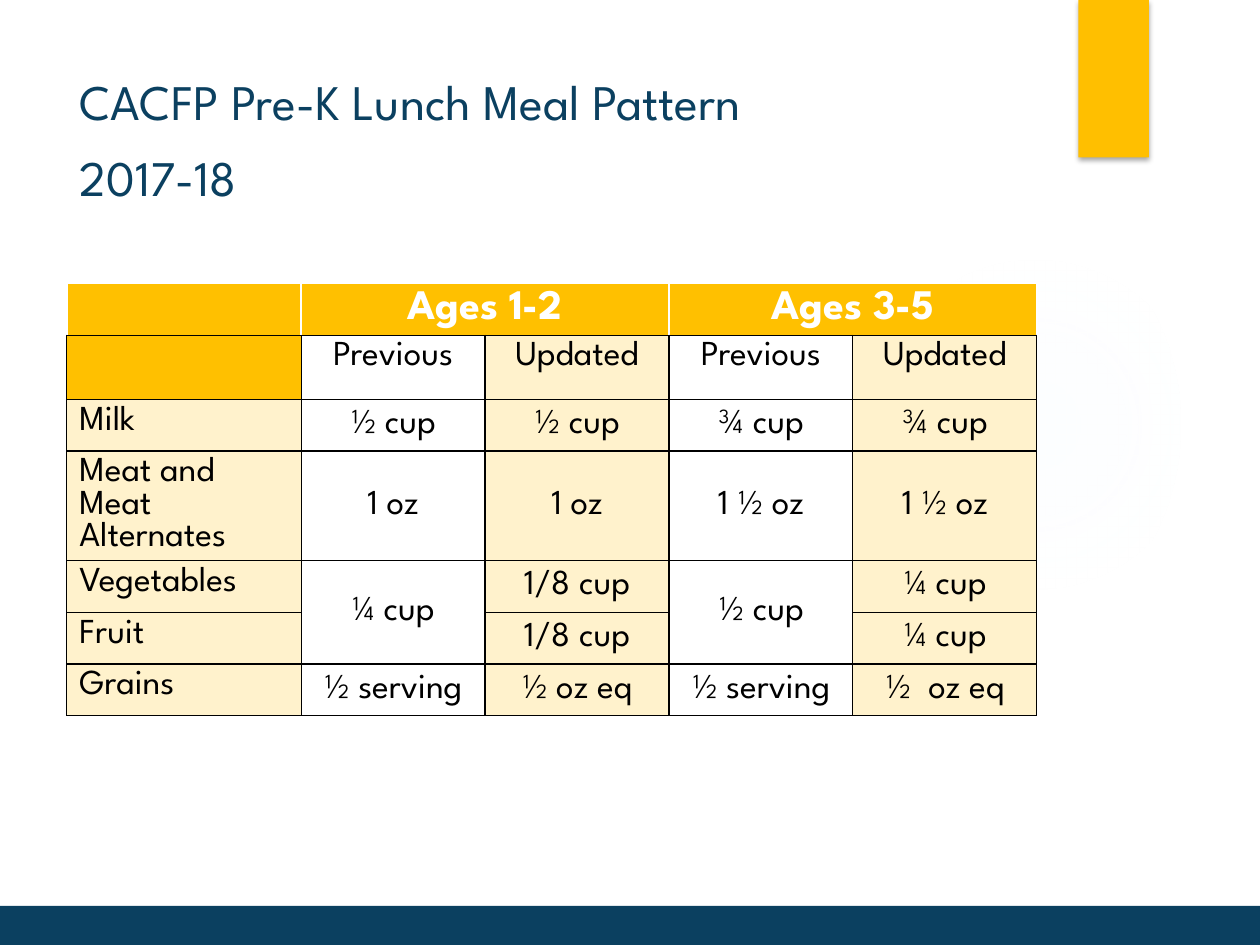
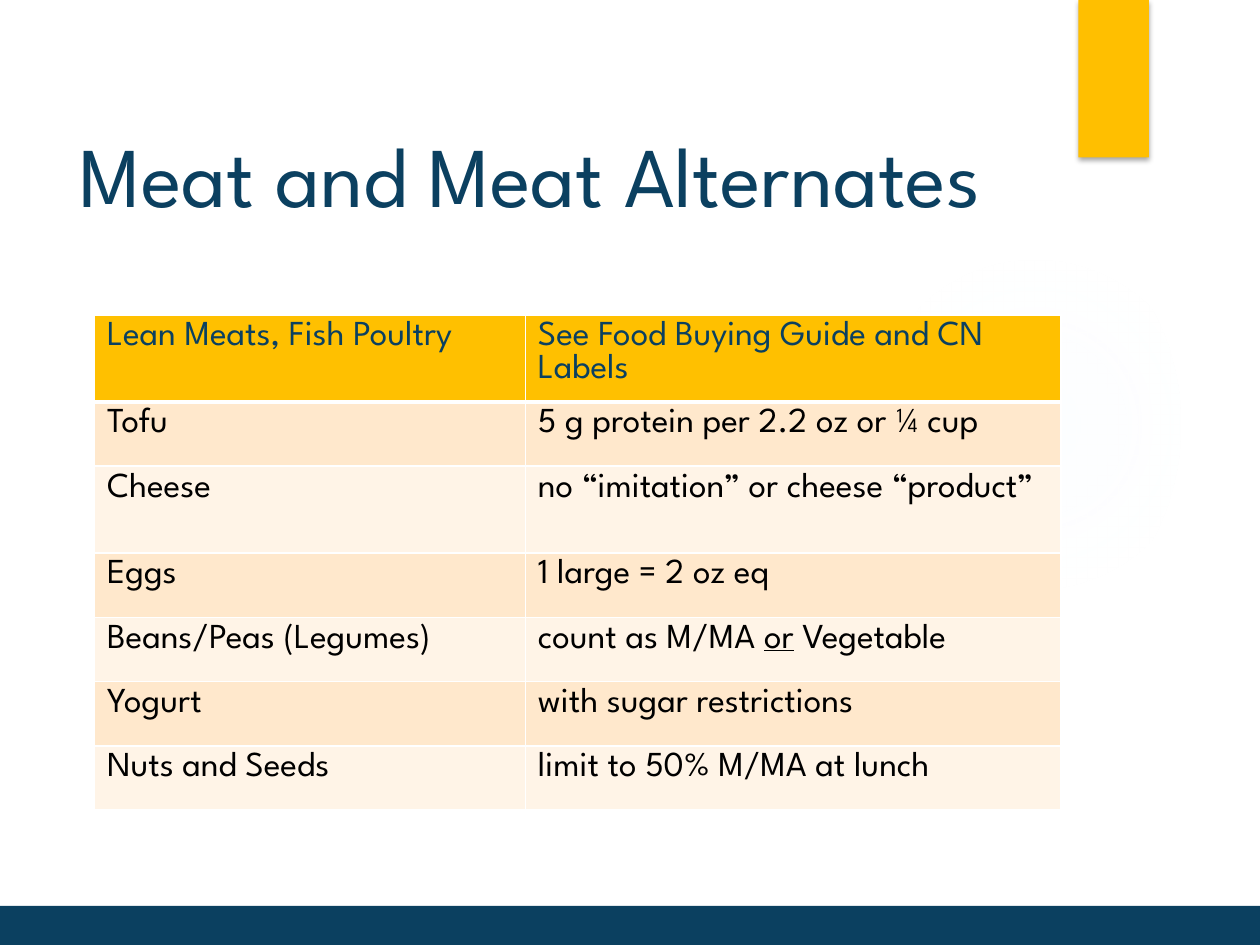
from dataclasses import dataclass

from lxml.etree import SubElement
from pptx import Presentation
from pptx.dml.color import RGBColor
from pptx.enum.shapes import MSO_SHAPE
from pptx.enum.text import MSO_ANCHOR, MSO_AUTO_SIZE, PP_ALIGN
from pptx.oxml import parse_xml
from pptx.oxml.ns import nsdecls, qn
from pptx.util import Inches, Pt


@dataclass(frozen=True)
class Theme:
    font: str = "League Spartan"
    navy: str = "0B4060"
    gold: str = "FFBF00"
    header_gold: str = "FFC000"
    cream: str = "FFF2CC"
    peach: str = "FFE8CC"
    pale_peach: str = "FFF4E7"
    glow: str = "E4F3FC"
    white: str = "FFFFFF"
    black: str = "000000"
    long_title_size: float = 28.4
    title_size: float = 48.6
    title_spacing: float = 1.27
    age_size: int = 24
    body_size: int = 20


THEME = Theme()
TITLE_BOX = (0.53, 0.5, 7.71, 1.53)

AGE_GROUPS = ("Ages 1-2", "Ages 3-5")
LUNCH_ROWS = [
    ("", "Previous", "Updated", "Previous", "Updated"),
    ("Milk", "½ cup", "½ cup", "¾ cup", "¾ cup"),
    ("Meat and Meat Alternates", "1 oz", "1 oz", "1 ½ oz", "1 ½ oz"),
    ("Vegetables", "¼ cup", "1/8 cup", "½ cup", "¼ cup"),
    ("Fruit", "", "1/8 cup", "", "¼ cup"),
    ("Grains", "½ serving", "½ oz eq", "½ serving", "½  oz eq"),
]
LUNCH_HEIGHTS = (0.41, 0.51, 0.41, 0.87, 0.41, 0.41, 0.41)
VEGETABLES_ROW, FRUIT_ROW = 4, 5

# A tuple holds the runs of one cell; its second run is underlined.
ALTERNATES_ROWS = [
    ("Lean Meats, Fish Poultry", "See Food Buying Guide and CN Labels"),
    ("Tofu", "5 g protein per 2.2 oz or ¼ cup"),
    ("Cheese", "no “imitation” or cheese “product”"),
    ("Eggs", "1 large = 2 oz eq"),
    ("Beans/Peas (Legumes)", ("count as M/MA ", "or", " Vegetable")),
    ("Yogurt", "with sugar restrictions"),
    ("Nuts and Seeds", "limit to 50% M/MA at lunch"),
]
ALTERNATES_HEIGHTS = (0.69, 0.51, 0.69, 0.51, 0.51, 0.51, 0.51)


def inches(values):
    return [Inches(value) for value in values]


def style_run(run, size, color, bold=False):
    run.font.name = THEME.font
    run.font.size = Pt(size)
    run.font.bold = bold
    run.font.color.rgb = RGBColor.from_string(color)


def add_plain_shape(slide, kind, box, fill=None):
    shape = slide.shapes.add_shape(kind, *inches(box))
    shape.shadow.inherit = False
    shape.line.fill.background()
    if fill:
        shape.fill.solid()
        shape.fill.fore_color.rgb = RGBColor.from_string(fill)
    else:
        shape.fill.background()
    return shape


def add_glow(slide):
    """Add a faint ellipse that fades out from its centre."""
    ellipse = add_plain_shape(slide, MSO_SHAPE.OVAL, (7.06, 1.83, 2.31, 3.08))
    stops = "".join(
        f'<a:gs pos="{position}000"><a:srgbClr val="{THEME.glow}">'
        f'<a:alpha val="{alpha}000"/></a:srgbClr></a:gs>'
        for position, alpha in ((0, 7), (36, 6), (69, 0))
    )
    gradient = parse_xml(
        f'<a:gradFill {nsdecls("a")}><a:gsLst>{stops}</a:gsLst><a:path path="circle">'
        '<a:fillToRect l="50000" t="50000" r="50000" b="50000"/></a:path></a:gradFill>'
    )
    properties = ellipse.element.spPr
    properties.replace(properties.find(qn("a:noFill")), gradient)


def add_shadow(shape, blur, distance, alpha):
    """Add a black shadow that falls straight down."""
    effects = shape.element.spPr.find(qn("a:effectLst"))
    shadow = SubElement(
        effects, qn("a:outerShdw"), blurRad=str(Pt(blur)), dist=str(Pt(distance)),
        dir="5400000", rotWithShape="0",
    )
    color = SubElement(shadow, qn("a:srgbClr"), val=THEME.black)
    SubElement(color, qn("a:alpha"), val=str(alpha * 1000))


def add_backdrop(slide):
    add_glow(slide)
    tab = add_plain_shape(slide, MSO_SHAPE.RECTANGLE, (8.56, 0, 0.56, 1.25), THEME.gold)
    add_shadow(tab, blur=3.1, distance=1.8, alpha=35)
    add_plain_shape(slide, MSO_SHAPE.RECTANGLE, (0, 7.19, 10, 0.31), THEME.navy)


def add_title_slide(presentation, text, size, bottom_inset=0.05):
    slide = presentation.slides.add_slide(presentation.slide_layouts[5])
    add_backdrop(slide)
    title = slide.shapes.title
    title.element.getparent().append(title.element)
    title.left, title.top, title.width, title.height = inches(TITLE_BOX)
    frame = title.text_frame
    frame.text = text
    frame.word_wrap = True
    frame.auto_size = MSO_AUTO_SIZE.NONE
    frame.vertical_anchor = MSO_ANCHOR.MIDDLE
    frame.margin_bottom = Inches(bottom_inset)
    paragraph = frame.paragraphs[0]
    paragraph.alignment = PP_ALIGN.LEFT
    paragraph.line_spacing = THEME.title_spacing
    for run in paragraph.runs:
        style_run(run, size, THEME.navy)
    return slide


def add_plain_table(slide, left, top, widths, heights):
    box = inches((left, top, sum(widths), sum(heights)))
    table = slide.shapes.add_table(len(heights), len(widths), *box).table
    table.first_row = table.horz_banding = False
    for column, width in zip(table.columns, widths):
        column.width = Inches(width)
    for row, height in zip(table.rows, heights):
        row.height = Inches(height)
    return table


def set_borders(cell, color, width, bottom=None):
    """Line all four sides; bottom may give another (color, width)."""
    properties = cell._tc.get_or_add_tcPr()
    for index, side in enumerate("LRTB"):
        line_color, line_width = bottom if bottom and side == "B" else (color, width)
        properties.insert(index, parse_xml(
            f'<a:ln{side} {nsdecls("a")} w="{Pt(line_width)}"><a:solidFill>'
            f'<a:srgbClr val="{line_color}"/></a:solidFill></a:ln{side}>'
        ))


def fill_cell(cell, content, fill=None, size=THEME.body_size, color=THEME.black,
              bold=False, centered=False, anchor=MSO_ANCHOR.TOP):
    if fill:
        cell.fill.solid()
        cell.fill.fore_color.rgb = RGBColor.from_string(fill)
    else:
        cell.fill.background()
    cell.vertical_anchor = anchor
    paragraph = cell.text_frame.paragraphs[0]
    paragraph.alignment = PP_ALIGN.CENTER if centered else PP_ALIGN.LEFT
    if not content:
        return
    parts = content if isinstance(content, tuple) else (content,)
    for index, part in enumerate(parts):
        run = paragraph.add_run()
        run.text = part
        style_run(run, size, color, bold)
        if index == 1:
            run.font.underline = True


def add_lunch_table(slide):
    table = add_plain_table(slide, 0.53, 2.25, (1.86,) + (1.46,) * 4, LUNCH_HEIGHTS)
    for column in range(5):
        is_group_start = column in (1, 3)
        group = AGE_GROUPS[column // 2] if is_group_start else ""
        cell = table.cell(0, column)
        fill_cell(cell, group, THEME.header_gold, THEME.age_size, THEME.white,
                  bold=True, centered=True)
        set_borders(cell, THEME.white, 1, bottom=(THEME.black, 0.75))
    for row, values in enumerate(LUNCH_ROWS, start=1):
        for column, value in enumerate(values):
            fill = THEME.cream if column % 2 == 0 else None
            if row == 1 and column == 0:
                fill = THEME.header_gold
            is_amount = row > 1 and column > 0
            cell = table.cell(row, column)
            fill_cell(cell, value, fill, centered=column > 0,
                      anchor=MSO_ANCHOR.MIDDLE if is_amount else MSO_ANCHOR.TOP)
            set_borders(cell, THEME.black, 0.75)
    for column in (1, 3):
        table.cell(0, column).merge(table.cell(0, column + 1))
        table.cell(VEGETABLES_ROW, column).merge(table.cell(FRUIT_ROW, column))


def add_alternates_table(slide):
    table = add_plain_table(slide, 0.75, 2.5, (3.42, 4.25), ALTERNATES_HEIGHTS)
    for row, values in enumerate(ALTERNATES_ROWS):
        is_header = row == 0
        band = THEME.peach if row % 2 else THEME.pale_peach
        for column, value in enumerate(values):
            cell = table.cell(row, column)
            fill_cell(cell, value, THEME.header_gold if is_header else band,
                      color=THEME.navy if is_header else THEME.black)
            set_borders(cell, THEME.white, 1,
                        bottom=(THEME.white, 3) if is_header else None)


def main():
    presentation = Presentation()
    presentation.slide_width, presentation.slide_height = inches((10, 7.5))
    lunch_slide = add_title_slide(
        presentation, "CACFP Pre-K Lunch Meal Pattern\v2017-18",
        THEME.long_title_size, bottom_inset=0.51,
    )
    add_lunch_table(lunch_slide)
    alternates_slide = add_title_slide(
        presentation, "Meat and Meat Alternates", THEME.title_size
    )
    add_alternates_table(alternates_slide)
    presentation.save("out.pptx")


if __name__ == "__main__":
    main()
